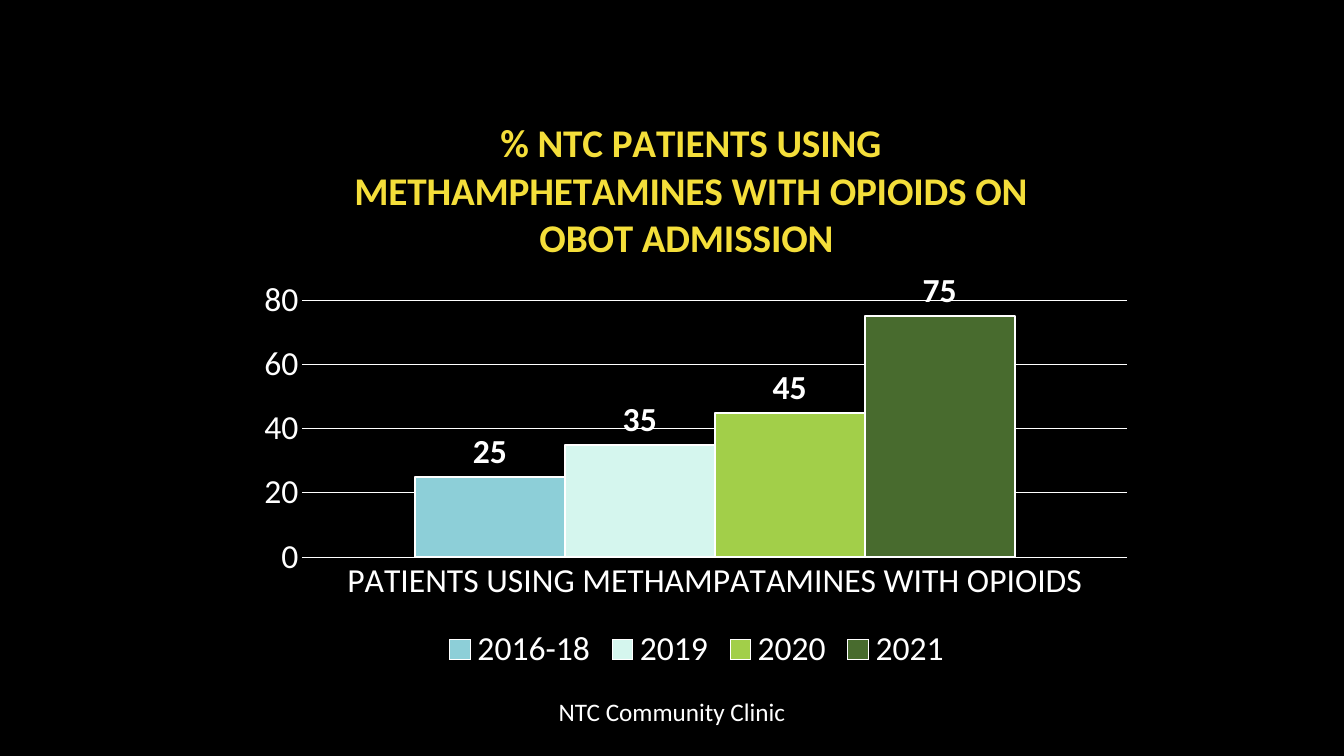
from dataclasses import dataclass

from lxml.etree import SubElement
from pptx import Presentation
from pptx.chart.data import CategoryChartData
from pptx.dml.color import RGBColor as RGB
from pptx.enum.chart import XL_CHART_TYPE as ChartType
from pptx.enum.chart import XL_LABEL_POSITION as LabelPos
from pptx.enum.chart import XL_LEGEND_POSITION as LegendPos
from pptx.enum.chart import XL_TICK_MARK as Tick
from pptx.enum.text import MSO_ANCHOR as Anchor
from pptx.enum.text import PP_ALIGN as Align
from pptx.oxml.ns import qn
from pptx.util import Inches, Pt


@dataclass(frozen=True)
class Theme:
    """Colours and type sizes of the slide."""
    font: str = "Calibri"
    background: RGB = RGB.from_string("000000")
    ink: RGB = RGB.from_string("FFFFFF")
    title: RGB = RGB.from_string("F4DE3A")
    title_size: Pt = Pt(28)
    chart_size: Pt = Pt(24)
    footer_size: Pt = Pt(18)
    grid_width: Pt = Pt(0.75)
    bar_outline: Pt = Pt(1.5)


THEME = Theme()
WIDTH, HEIGHT = Inches(13.33), Inches(7.5)
TITLE = "% NTC PATIENTS USING METHAMPHETAMINES WITH OPIOIDS ON OBOT ADMISSION "
CATEGORY = "PATIENTS USING METHAMPATAMINES WITH OPIOIDS"
YEARS = [
    ("2016-18", 25, "8DCFD8"),
    ("2019", 35, "D5F6EE"),
    ("2020", 45, "A2CF49"),
    ("2021", 75, "486B2E"),
]


def share_box(left, top, width, height):
    """Turn shares of the slide into a box of lengths."""
    return (int(WIDTH * left), int(HEIGHT * top),
            int(WIDTH * width), int(HEIGHT * height))


def style_font(font, size, color=THEME.ink, bold=False):
    """Apply the theme typeface with a size, colour and weight."""
    font.name, font.size, font.bold = THEME.font, size, bold
    font.color.rgb = color


def style_line(line, width):
    """Draw a line in the ink colour."""
    line.color.rgb = THEME.ink
    line.width = width


def place_part(part, position, **shares):
    """Fix a chart part at shares of the chart's size."""
    for stale in part.findall(qn("c:layout")):
        part.remove(stale)
    layout = SubElement(part, qn("c:layout"))
    part.insert(position, layout)
    manual = SubElement(layout, qn("c:manualLayout"))
    for tag, value in shares.items():
        SubElement(manual, qn(f"c:{tag}")).set("val", str(value))


def style_title(chart):
    """Write the chart's headline."""
    chart.has_title = True
    headline = chart.chart_title.text_frame
    headline.text = TITLE
    style_font(headline.paragraphs[0].font, THEME.title_size, THEME.title, True)
    chart.chart_title.include_in_layout = False
    place_part(chart.chart_title._element, 1, xMode="edge", yMode="edge", x=0.11, y=0.05)


def style_axes(chart):
    """Style both axes and the gridlines."""
    for axis in (chart.category_axis, chart.value_axis):
        axis.major_tick_mark = axis.minor_tick_mark = Tick.NONE
        style_font(axis.tick_labels.font, THEME.chart_size)
    style_line(chart.category_axis.format.line, THEME.grid_width)
    values = chart.value_axis
    values.minimum_scale, values.maximum_scale, values.major_unit = 0, 80, 20
    values.format.line.fill.background()
    values.has_major_gridlines = True
    style_line(values.major_gridlines.format.line, THEME.grid_width)


def style_bars(plot):
    """Colour, outline and label the bar of each year."""
    plot.gap_width, plot.overlap, plot.vary_by_categories = 150, 0, False
    for bar, (_, _, color) in zip(plot.series, YEARS):
        bar.format.fill.solid()
        bar.format.fill.fore_color.rgb = RGB.from_string(color)
        style_line(bar.format.line, THEME.bar_outline)
        labels = bar.data_labels
        labels.show_value = True
        labels.position = LabelPos.OUTSIDE_END
        style_font(labels.font, THEME.chart_size, bold=True)


def add_patient_chart(slide, box):
    """Place the column chart of patients by year in the box."""
    data = CategoryChartData()
    data.categories = [CATEGORY]
    for year, percent, _ in YEARS:
        data.add_series(year, [percent])
    chart = slide.shapes.add_chart(ChartType.COLUMN_CLUSTERED, *box, data).chart
    style_font(chart.font, THEME.chart_size)
    style_title(chart)
    style_axes(chart)
    style_bars(chart.plots[0])
    chart.has_legend = True
    chart.legend.position = LegendPos.BOTTOM
    chart.legend.include_in_layout = False
    style_font(chart.legend.font, THEME.chart_size)
    place_part(chart._chartSpace.chart.plotArea, 0, layoutTarget="inner",
               xMode="edge", yMode="edge", x=0.06, y=0.37, w=0.92, h=0.43)


def add_footer(slide, box):
    """Place the clinic's name centred in the box."""
    frame = slide.shapes.add_textbox(*box).text_frame
    frame.word_wrap = True
    frame.vertical_anchor = Anchor.TOP
    clinic = frame.paragraphs[0]
    clinic.text = "NTC Community Clinic"
    clinic.alignment = Align.CENTER
    style_font(clinic.font, THEME.footer_size)


def main():
    """Build and save the slide."""
    deck = Presentation()
    deck.slide_width, deck.slide_height = WIDTH, HEIGHT
    slide = deck.slides.add_slide(deck.slide_layouts[6])
    slide.background.fill.solid()
    slide.background.fill.fore_color.rgb = THEME.background
    add_patient_chart(slide, share_box(0.185, 0.105, 0.667, 0.79))
    add_footer(slide, share_box(0.386, 0.915, 0.228, 0.053))
    deck.save("out.pptx")


if __name__ == "__main__":
    main()
